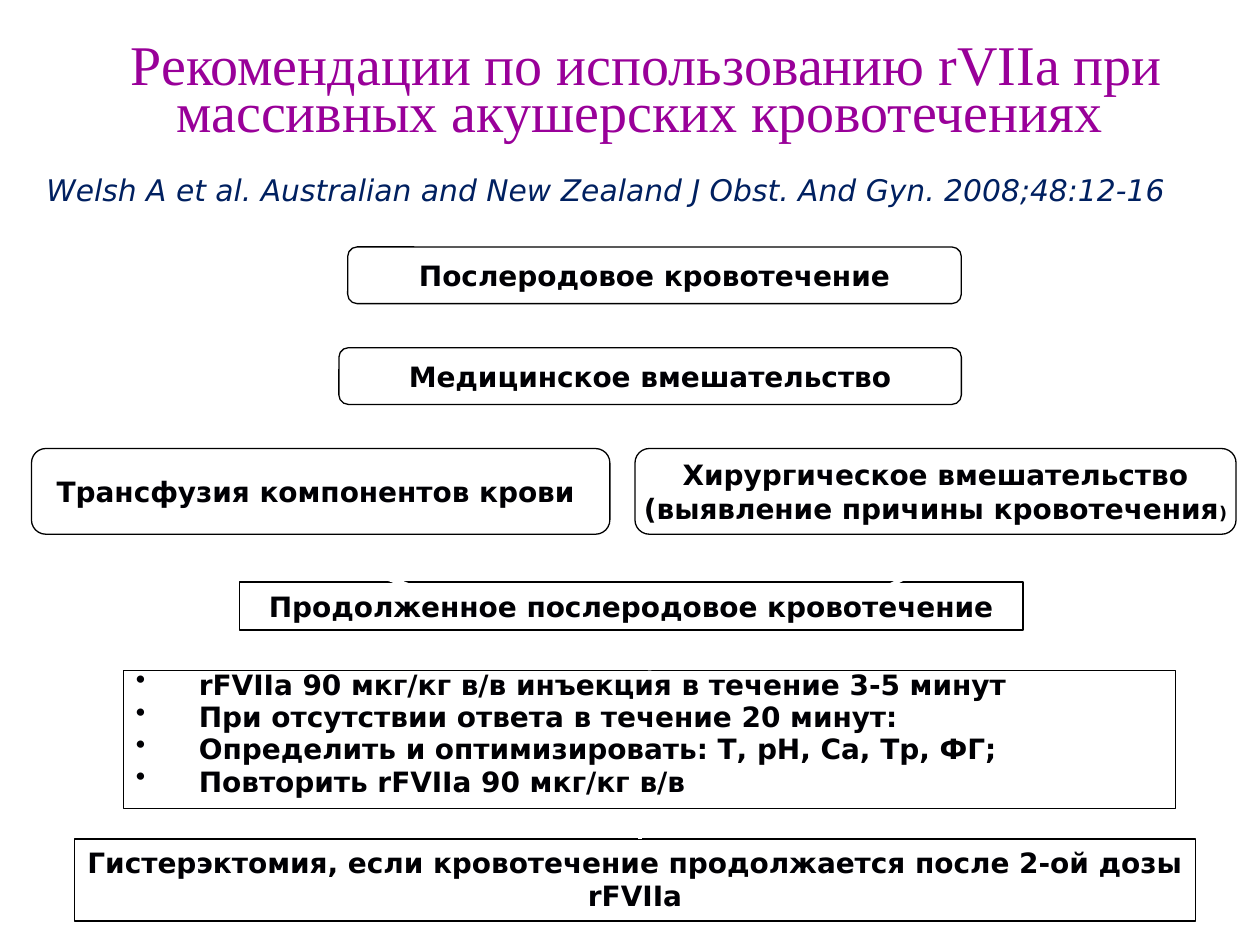
from lxml.etree import SubElement
from pptx import Presentation
from pptx.dml.color import RGBColor
from pptx.enum.shapes import MSO_CONNECTOR, MSO_SHAPE
from pptx.enum.text import MSO_ANCHOR, PP_ALIGN
from pptx.oxml.ns import qn
from pptx.util import Pt

PX = 9144  # 100 px to the inch
INK, WHITE = "000004", "FFFFFF"


def add_text(sp, text, size=16, color=INK, font="DejaVu Sans", bold=True,
             italic=False, align=PP_ALIGN.CENTER, anchor=MSO_ANCHOR.MIDDLE,
             wrap=True, inset=(10, 5)):
    tf = sp.text_frame
    tf.text = text
    tf.word_wrap = wrap
    tf.vertical_anchor = anchor
    tf.margin_left = tf.margin_right = inset[0] * PX
    tf.margin_top = tf.margin_bottom = inset[1] * PX
    for p in tf.paragraphs:
        p.alignment = align
        for r in p.runs:
            r.font.size, r.font.name = Pt(size), font
            r.font.bold, r.font.italic = bold, italic
            r.font.color.rgb = RGBColor.from_string(color)
    return tf


def add_line(x1, y1, x2, y2, width=2.25, kind=MSO_CONNECTOR.STRAIGHT):
    line = s.shapes.add_connector(kind, x1 * PX, y1 * PX, x2 * PX, y2 * PX)
    line.line.color.rgb = RGBColor.from_string(WHITE)
    line.line.width = Pt(width)
    SubElement(line._element.spPr, qn("a:effectLst"))
    return line


prs = Presentation()
prs.slide_width, prs.slide_height = 1000 * PX, 750 * PX
s = prs.slides.add_slide(prs.slide_layouts[6])

# Title and citation
title = s.shapes.add_textbox(27 * PX, 28 * PX, 973 * PX, 95 * PX)
tf = add_text(title, "Рекомендации по использованию rVIIa при массивных акушерских кровотечениях ",
              32, "990099", "Times New Roman", bold=False)
tf.paragraphs[0].line_spacing = 0.7

citation = s.shapes.add_textbox(27 * PX, 131 * PX, 953 * PX, 38 * PX)
add_text(citation, "Welsh A et al. Australian and New Zealand J Obst. And Gyn. 2008;48:12-16",
         17, "002060", bold=False, italic=True, align=PP_ALIGN.LEFT,
         anchor=MSO_ANCHOR.TOP)

# Branches lie behind the boxes; each elbow is turned to leave vertically
for ends, degrees in [((612, 451, 647, 225), 270), ((403, 469, 368, 208), 90)]:
    elbow = add_line(*ends, kind=MSO_CONNECTOR.ELBOW)
    elbow._element.spPr.find(qn("a:xfrm")).set("rot", str(degrees * 60000))
first_step = add_line(516, 276, 520, 241)

# Boxes: name, shape, bounds, text, text options
TOP = {"anchor": MSO_ANCHOR.TOP}
SMALL = {"wrap": False, "inset": (5, 3)}
LARGE = {"wrap": False, "inset": (8, 4)}
ROUND, RECT = MSO_SHAPE.ROUNDED_RECTANGLE, MSO_SHAPE.RECTANGLE
steps = [
    ("bleeding", ROUND, (276, 196, 487, 45), "Послеродовое кровотечение", SMALL),
    ("medical", ROUND, (269, 276, 494, 45), "Медицинское вмешательство", SMALL),
    ("transfusion", ROUND, (25, 356, 459, 68), "Трансфузия компонентов крови ", LARGE),
    ("surgery", ROUND, (504, 356, 477, 68),
     "Хирургическое вмешательство\n(выявление причины кровотечения", LARGE),
    ("continued", RECT, (190, 462, 622, 38), "Продолженное послеродовое кровотечение", {}),
    ("protocol", RECT, (98, 532, 835, 110),
     "rFVIIa 90 мкг/кг в/в инъекция в течение 3-5 минут\n"
     "При отсутствии ответа в течение 20 минут:\n"
     "Определить и оптимизировать: Т, рН, Са, Тр, ФГ;\n"
     "Повторить rFVIIa 90 мкг/кг в/в", {"align": PP_ALIGN.LEFT, **TOP}),
    ("hysterectomy", RECT, (59, 666, 890, 65),
     "Гистерэктомия, если кровотечение продолжается после 2-ой дозы rFVIIa", TOP),
]
boxes = {}
for name, shape, bounds, text, options in steps:
    sp = s.shapes.add_shape(shape, *[v * PX for v in bounds])
    sp.shadow.inherit = False
    if name == "continued":
        sp.fill.solid()
        sp.fill.fore_color.rgb = RGBColor.from_string(WHITE)
    else:
        sp.fill.background()
    sp.line.color.rgb = RGBColor.from_string("000000")
    sp.line.width = Pt(0.75)
    add_text(sp, text, **options)
    boxes[name] = sp

# The closing bracket is smaller than the rest
r = boxes["surgery"].text_frame.paragraphs[1].add_run()
r.text = ")"
r.font.size, r.font.name, r.font.bold = Pt(10), "DejaVu Sans", True
r.font.color.rgb = RGBColor.from_string(INK)

for p in boxes["protocol"].text_frame.paragraphs:
    p.line_spacing = 0.7
    p.space_before = Pt(5)
    pPr = p._p.get_or_add_pPr()
    pPr.set("marL", str(50 * PX))
    pPr.set("indent", str(-50 * PX))
    SubElement(pPr, qn("a:buChar")).set("char", "•")

# Lines in front of the boxes
first_step.begin_connect(boxes["medical"], 0)
first_step.end_connect(boxes["bleeding"], 2)
add_line(728, 454, 697, 469)
add_line(295, 454, 335, 469, width=3)
add_line(516, 509, 516, 532).end_connect(boxes["protocol"], 0)
add_line(508, 643, 508, 666)

prs.save("out.pptx")
